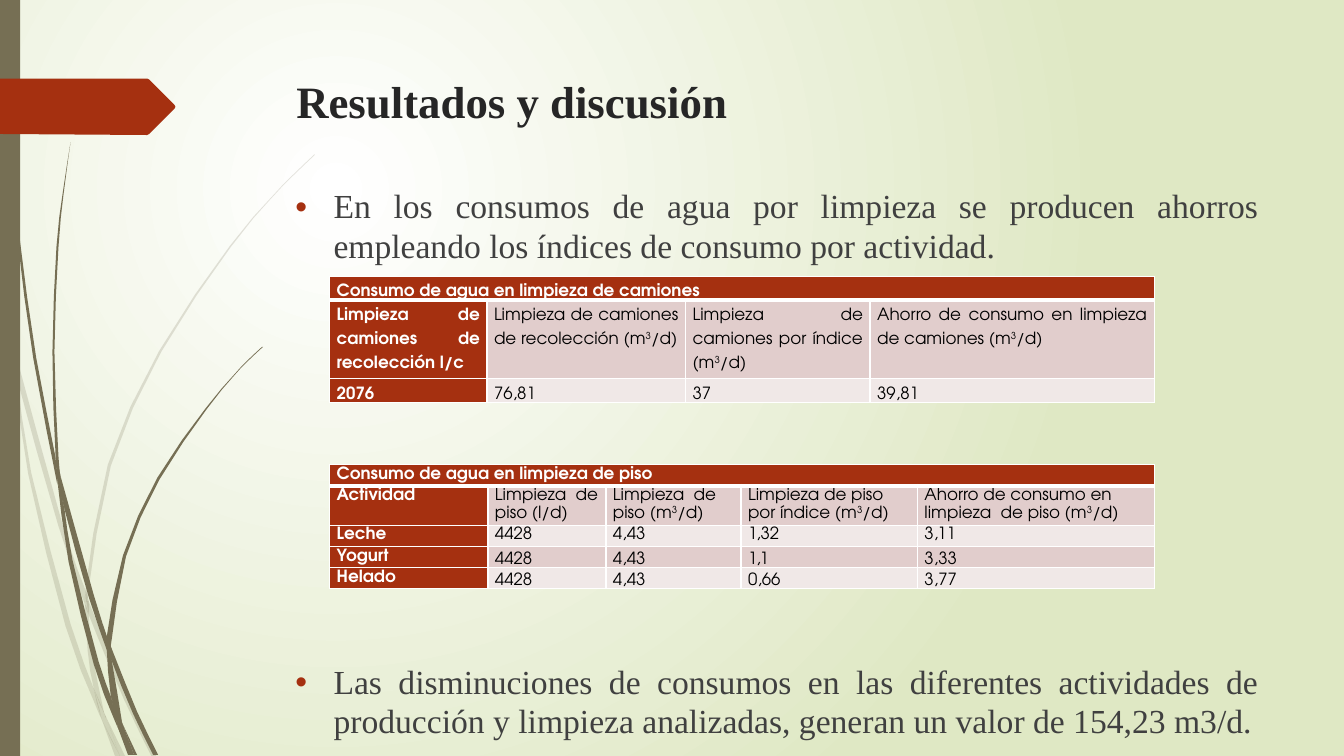
from lxml import etree
from pptx import Presentation
from pptx.dml import color
from pptx.enum import shapes, text
from pptx.oxml import ns, parse_xml
from pptx.util import Inches, Pt

RED, OLIVE, WHITE, BLACK = "A53010", "766F54", "FFFFFF", "000000"
ROSE, PALE = "E1CDCC", "F0E8E7"
SERIF, SANS = "Times New Roman", "TeX Gyre Adventor"
SIDES = ("lnL", "lnR", "lnT", "lnB")


def rgb(code):
    return color.RGBColor.from_string(code)


def child(parent, tag, **attrs):
    return etree.SubElement(parent, ns.qn("a:" + tag), attrs)


def smooth(knots):
    ends = [knots[0], *knots, knots[-1]]
    curve = []
    for a, b, c, d in zip(ends, ends[1:], ends[2:], ends[3:]):
        mid = tuple((9 * (q + r) - p - s) / 16 for p, q, r, s in zip(a, b, c, d))
        curve += [b, mid]
    return curve + [knots[-1]]


class Deck:
    def __init__(self):
        self.prs = Presentation()
        self.prs.slide_width, self.prs.slide_height = Inches(13.33), Inches(7.5)
        self.slide = self.prs.slides.add_slide(self.prs.slide_layouts[6])
        self.shapes = self.slide.shapes

    def back(self, inner, outer):
        fill = self.slide.background.fill
        fill.solid()
        fill.fore_color.rgb = rgb(inner)
        flat = self.slide.background._cSld.find(".//" + ns.qn("a:solidFill"))
        grad = parse_xml(
            f'<a:gradFill {ns.nsdecls("a")} rotWithShape="1"><a:gsLst>'
            f'<a:gs pos="0"><a:srgbClr val="{inner}"/></a:gs>'
            f'<a:gs pos="100000"><a:srgbClr val="{outer}"/></a:gs></a:gsLst>'
            '<a:path path="circle"><a:fillToRect l="50000" t="50000" '
            'r="100000" b="100000"/></a:path></a:gradFill>')
        flat.getparent().replace(flat, grad)

    def paint(self, shape, fill, alpha=100):
        shape.shadow.inherit = False
        shape.fill.solid()
        shape.fill.fore_color.rgb = rgb(fill)
        shape.line.fill.background()
        if alpha < 100:
            tone = shape._element.spPr.find(".//" + ns.qn("a:srgbClr"))
            child(tone, "alpha", val=str(alpha * 1000))

    def rect(self, x, y, w, h, fill):
        kind = shapes.MSO_SHAPE.RECTANGLE
        box = [Inches(v) for v in (x, y, w, h)]
        self.paint(self.shapes.add_shape(kind, *box), fill)

    def outline(self, points, fill, alpha=100):
        first, *rest = [(Inches(x), Inches(y)) for x, y in points]
        form = self.shapes.build_freeform(*first, scale=1.0)
        form.add_line_segments(rest, close=True)
        self.paint(form.convert_to_shape(), fill, alpha)

    def blade(self, left, right, alpha):
        self.outline(smooth(left) + smooth(right)[::-1], OLIVE, alpha)

    def runs(self, para, words, size, font, ink, bold=False):
        for i, part in enumerate(words.split("^")):
            run = para.add_run()
            run.text = part
            run.font.size, run.font.name, run.font.bold = Pt(size), font, bold
            run.font.color.rgb = rgb(ink)
            if i % 2:
                run._r.get_or_add_rPr().set("baseline", "30000")

    def frame(self, x, y, w, h):
        box = self.shapes.add_textbox(*[Inches(v) for v in (x, y, w, h)])
        box.text_frame.word_wrap = True
        return box.text_frame

    def title(self, words, *box):
        self.runs(self.frame(*box).paragraphs[0], words, 32, SERIF, "262626", True)

    def bullets(self, items, gap, *box):
        frame = self.frame(*box)
        for i, words in enumerate(items):
            para = frame.add_paragraph() if i else frame.paragraphs[0]
            para.alignment = text.PP_ALIGN.JUSTIFY
            para.line_spacing = 0.98
            para.space_before = Pt(gap if i else 0)
            props = para._p.get_or_add_pPr()
            props.set("marL", str(Inches(0.38)))
            props.set("indent", str(-Inches(0.38)))
            child(child(props, "buClr"), "srgbClr", val=RED)
            child(props, "buFont", typeface="Arial")
            child(props, "buChar", char="•")
            self.runs(para, words, 24, SERIF, "404040")

    def cell(self, cell, words, head, fill, thick, align, lead, low):
        props = cell._tc.get_or_add_tcPr()
        for side in SIDES:
            width = 3 if thick and side == "lnB" else 1
            line = child(props, side, w=str(Pt(width)))
            child(child(line, "solidFill"), "srgbClr", val=WHITE)
        cell.fill.solid()
        cell.fill.fore_color.rgb = rgb(RED if head else fill)
        cell.margin_left = cell.margin_right = Inches(0.07)
        cell.margin_top = cell.margin_bottom = 0
        anchor = text.MSO_ANCHOR
        cell.vertical_anchor = anchor.BOTTOM if low else anchor.TOP
        para = cell.text_frame.paragraphs[0]
        para.alignment, para.line_spacing = align, Pt(lead)
        if words:
            self.runs(para, words, 12, SANS, WHITE if head else BLACK, head)

    def table(self, x, y, cols, rows, data, align, lead, low=99):
        box = [Inches(v) for v in (x, y, sum(cols), sum(rows))]
        grid = self.shapes.add_table(len(rows), len(cols), *box).table
        grid.first_row = grid.horz_banding = False
        for col, width in zip(grid.columns, cols):
            col.width = Inches(width)
        for row, height in zip(grid.rows, rows):
            row.height = Inches(height)
        grid.cell(0, 0).merge(grid.cell(0, len(cols) - 1))
        for r, line in enumerate(data):
            for c in range(len(cols)):
                words = line[c] if c < len(line) else ""
                self.cell(grid.cell(r, c), words, r == 0 or c == 0,
                          ROSE if r % 2 else PALE, r == 0, align, lead,
                          r >= low and c > 0)


FAINT = [
    ([(0, 2.99), (.1, 3.44), (.11, 3.5)], [(0, 2.82), (.09, 3.22), (.11, 3.5)]),
    ([(.14, 3.45), (.17, 3.76), (.58, 5.22), (.84, 5.99)],
     [(.14, 3.45), (.62, 5.2), (.85, 5.86)]),
    ([(.88, 5.96), (.88, 6.1), (1.23, 6.94), (1.5, 7.5)],
     [(.88, 5.96), (.92, 6.07), (1.27, 6.92), (1.55, 7.5)]),
    ([(1.05, 7.11), (1.19, 7.5)], [(1.05, 7.11), (1.24, 7.5)]),
    ([(.11, 3.5), (.28, 4.7), (.65, 6.21), (.92, 6.93), (1.01, 7.14)],
     [(.11, 3.5), (.17, 3.76), (.31, 4.69), (.7, 6.19), (.93, 6.83), (1.01, 7.14)]),
    ([(.84, 5.99), (.87, 6.46), (.93, 6.83), (1.05, 7.11)],
     [(.84, 5.99), (.88, 6.1), (.91, 6.46), (1.03, 7.06), (1.05, 7.11)]),
    ([(3.12, 1.53), (2.89, 1.75), (2.68, 1.97), (2.28, 2.44), (1.58, 3.48),
      (1.07, 4.61), (.85, 5.84), (.88, 5.96)],
     [(3.12, 1.54), (2.9, 1.75), (2.68, 1.98), (2.29, 2.45), (1.6, 3.49),
      (1.1, 4.62), (.88, 5.84), (.88, 5.96)]),
    ([(1.01, 7.14), (1.14, 7.5)], [(1.01, 7.14), (1.19, 7.5)]),
    ([(.85, 5.86), (.84, 5.99), (.88, 6.1)], [(.85, 5.86), (.88, 5.96), (.88, 6.1)]),
    ([(.93, 6.83), (1.01, 7.14), (1.19, 7.5)], [(.93, 6.83), (1.05, 7.11), (1.19, 7.5)]),
]
DARK = [
    ([(.03, 0), (.04, .48), (.07, 1.1), (.17, 2.33), (.33, 3.55), (.57, 4.81)],
     [(.04, 0), (.05, .48), (.08, 1.09), (.19, 2.32), (.36, 3.55), (.55, 4.53),
      (.57, 4.81)]),
    ([(.6, 4.72), (.64, 5.05), (.88, 5.92), (1.06, 6.45)],
     [(.6, 4.72), (.93, 5.9), (1.06, 6.31)]),
    ([(1.1, 6.41), (1.11, 6.56), (1.32, 7.08), (1.52, 7.49)],
     [(1.1, 6.41), (1.13, 6.49), (1.36, 7.06), (1.57, 7.49)]),
    ([(.57, 4.77), (.68, 5.57), (.93, 6.59), (1.11, 7.08), (1.17, 7.22)],
     [(.57, 4.77), (.64, 5.05), (.72, 5.56), (.98, 6.57), (1.1, 6.91), (1.17, 7.22)]),
    ([(.7, 1.41), (.62, 1.93), (.56, 2.45), (.52, 3.49), (.55, 4.49), (.6, 4.72)],
     [(.7, 1.41), (.63, 1.93), (.58, 2.45), (.54, 3.49), (.58, 4.53), (.6, 4.72)]),
    ([(1.22, 7.19), (1.33, 7.49)], [(1.22, 7.19), (1.36, 7.49)]),
    ([(.55, 4.49), (.57, 4.77), (.64, 5.05)], [(.55, 4.49), (.6, 4.72), (.64, 5.05)]),
    ([(2.6, 3.44), (2.45, 3.58), (2.31, 3.73), (2.04, 4.05), (1.56, 4.74),
      (1.22, 5.51), (1.06, 6.31), (1.1, 6.41)],
     [(2.61, 3.44), (2.45, 3.59), (2.31, 3.74), (2.05, 4.06), (1.58, 4.76),
      (1.25, 5.52), (1.11, 6.33), (1.1, 6.41)]),
    ([(1.17, 7.22), (1.27, 7.49)], [(1.17, 7.22), (1.31, 7.49)]),
    ([(1.06, 6.45), (1.1, 6.91), (1.22, 7.19)],
     [(1.06, 6.45), (1.11, 6.56), (1.21, 7.16), (1.22, 7.19)]),
    ([(1.06, 6.31), (1.06, 6.45), (1.11, 6.56)], [(1.06, 6.31), (1.1, 6.41), (1.11, 6.56)]),
    ([(1.1, 6.91), (1.17, 7.22), (1.3, 7.49)], [(1.1, 6.91), (1.22, 7.19), (1.33, 7.49)]),
]
ARROW = [(0, .78), (1.46, .78), (1.48, .79), (1.73, 1.04), (1.74, 1.06),
         (1.73, 1.08), (1.48, 1.33), (1.46, 1.34), (0, 1.33)]
TRUCKS = [
    ["Consumo de agua en limpieza de camiones"],
    ["Limpieza de camiones de recolección l/c",
     "Limpieza de camiones de recolección (m^3^/d)",
     "Limpieza de camiones por índice (m^3^/d)",
     "Ahorro de consumo en limpieza de camiones (m^3^/d)"],
    ["2076", "76,81", "37", "39,81"],
]
FLOORS = [
    ["Consumo de agua en limpieza de piso"],
    ["Actividad", "Limpieza  de piso (l/d)", "Limpieza  de piso (m^3^/d)",
     "Limpieza de piso por índice (m^3^/d)",
     "Ahorro de consumo en limpieza  de piso (m^3^/d)"],
    ["Leche", "4428", "4,43", "1,32", "3,11"],
    ["Yogurt", "4428", "4,43", "1,1", "3,33"],
    ["Helado", "4428", "4,43", "0,66", "3,77"],
]
POINTS = [
    "En los consumos de agua por limpieza se producen ahorros empleando "
    "los índices de consumo por actividad.",
    "Las disminuciones de consumos en las diferentes actividades de producción "
    "y limpieza analizadas, generan un valor de 154,23 m3/d.",
]


def main():
    deck = Deck()
    deck.back(WHITE, "DFE8C4")
    for blades, alpha in ((FAINT, 20), (DARK, 100)):
        for left, right in blades:
            deck.blade(left, right, alpha)
    deck.rect(0, 0, 0.2, 7.5, OLIVE)
    deck.outline(ARROW, RED)
    deck.title("Resultados y discusión", 2.84, 0.68, 9.75, 1.4)
    deck.bullets(POINTS, 283, 2.83, 1.81, 9.75, 5.4)
    deck.table(3.27, 2.74, [1.56, 1.97, 1.83, 2.82], [.21, .78, .21], TRUCKS,
               text.PP_ALIGN.JUSTIFY, 17.1)
    deck.table(3.27, 4.61, [1.57, 1.17, 1.34, 1.75, 2.35],
               [.21, .39, .21, .21, .21], FLOORS, text.PP_ALIGN.LEFT, 12.9, 3)
    deck.prs.save("out.pptx")


if __name__ == "__main__":
    main()
